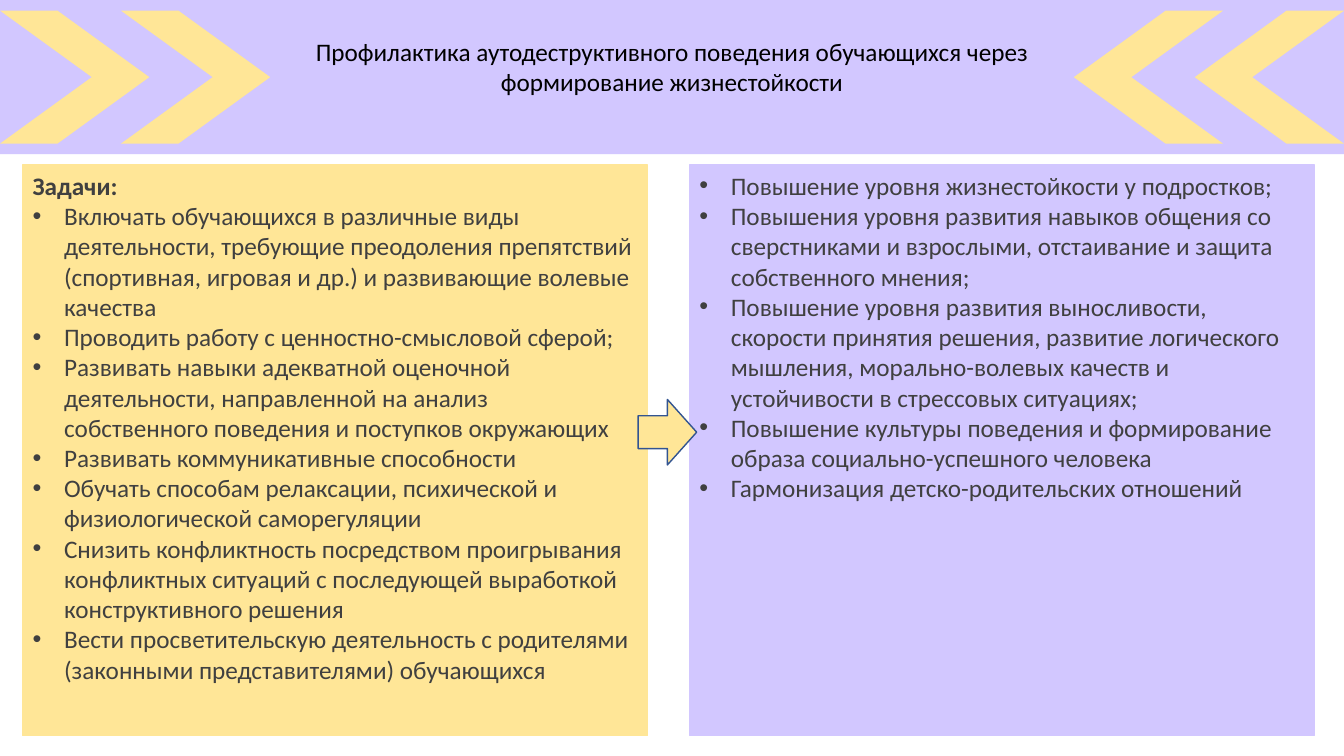
from lxml import etree
from pptx import Presentation
from pptx.dml.color import RGBColor
from pptx.enum.shapes import MSO_SHAPE as Preset
from pptx.enum.text import MSO_ANCHOR as Anchor, MSO_AUTO_SIZE as AutoSize, PP_ALIGN as Align
from pptx.oxml.ns import qn
from pptx.util import Pt

YELLOW, LILAC, VIOLET = "FFE697", "D2C7FF", "B6A4FF"
NAVY, GREY, BLACK = "325491", "404040", "000000"
SLIDE_WIDTH, SLIDE_HEIGHT = 960, 540
HEADER_BOX = (0, 0, SLIDE_WIDTH, 110.2)
TASKS_BOX = (16.2, 118, 446.4, 407.5)
RESULTS_BOX = (492.5, 118, 446.4, 407.5)

TITLE = "Профилактика аутодеструктивного поведения обучающихся через формирование жизнестойкости"
TASKS = [
    "Включать обучающихся в различные виды деятельности, требующие преодоления препятствий "
    "(спортивная, игровая и др.) и развивающие волевые качества",
    "Проводить работу с ценностно-смысловой сферой;",
    "Развивать навыки адекватной оценочной деятельности, направленной на анализ "
    "собственного поведения и поступков окружающих",
    "Развивать коммуникативные способности",
    "Обучать способам релаксации, психической и физиологической саморегуляции",
    "Снизить конфликтность посредством проигрывания конфликтных ситуаций "
    "с последующей выработкой конструктивного решения",
    "Вести просветительскую деятельность с родителями (законными представителями) обучающихся",
]
RESULTS = [
    "Повышение уровня жизнестойкости у подростков;",
    "Повышения уровня развития навыков общения со сверстниками и взрослыми, "
    "отстаивание и защита собственного мнения;",
    "Повышение уровня развития выносливости, скорости принятия решения, развитие логического "
    "мышления, морально-волевых качеств и устойчивости в стрессовых ситуациях;",
    "Повышение культуры поведения и формирование образа социально-успешного человека",
    "Гармонизация детско-родительских отношений",
]


def color(value):
    """Return the colour for a hex string."""
    return RGBColor.from_string(value)


def add_preset(slide, preset, box, fill, line=None):
    """Add a flat preset shape with an optional outline."""
    shape = slide.shapes.add_shape(preset, *map(Pt, box))
    shape.shadow.inherit = False
    shape.fill.solid()
    shape.fill.fore_color.rgb = color(fill)
    if line:
        shape.line.color.rgb = color(line)
        shape.line.width = Pt(1)
    else:
        shape.line.fill.background()
    return shape


def format_paragraph(paragraph, text, font_color, align=Align.LEFT, bold=False):
    """Fill a paragraph and set its font."""
    paragraph.text = text
    paragraph.alignment = align
    font = paragraph.font
    font.name, font.size, font.bold = "Calibri", Pt(18), bold
    font.color.rgb = color(font_color)


def add_bullet(paragraph):
    """Give a paragraph a hanging round bullet."""
    properties = paragraph._p.get_or_add_pPr()
    properties.set("marL", str(Pt(22.5)))
    properties.set("indent", str(-Pt(22.5)))
    bullet_font = etree.Element(qn("a:buFont"), typeface="Arial")
    bullet = etree.Element(qn("a:buChar"), char="•")
    properties.insert_element_before(bullet_font, "a:defRPr")
    properties.insert_element_before(bullet, "a:defRPr")


def add_header(slide, box):
    """Draw the translucent band, the title and the mirrored chevrons."""
    left, top, width, height = box
    band = add_preset(slide, Preset.RECTANGLE, box, VIOLET)
    band_color = band.element.spPr.find(qn("a:solidFill"))[0]
    etree.SubElement(band_color, qn("a:alpha"), val="61000")

    title = slide.shapes.title
    title.element.addprevious(band.element)
    title.left, title.top = Pt(left + 193), Pt(top + 22.3)
    title.width, title.height = Pt(574), Pt(51)
    frame = title.text_frame
    frame.word_wrap = True
    frame.auto_size = AutoSize.SHAPE_TO_FIT_TEXT
    frame.vertical_anchor = Anchor.TOP
    format_paragraph(frame.paragraphs[0], TITLE, BLACK, Align.CENTER)

    chevron_width, chevron_height = 106.6, 95
    chevron_top = top + (height - chevron_height) / 2
    for offset in (0, 86.4):
        mirrored = width - chevron_width - offset
        for chevron_left, rotation in ((offset, 0), (mirrored, 180)):
            chevron_box = (left + chevron_left, chevron_top, chevron_width, chevron_height)
            chevron = add_preset(slide, Preset.CHEVRON, chevron_box, YELLOW)
            chevron.adjustments[0] = 0.69
            chevron.rotation = rotation


def add_panel(slide, box, fill, items, heading=None):
    """Draw a filled panel with an optional heading and a bulleted list."""
    frame = add_preset(slide, Preset.RECTANGLE, box, fill, fill).text_frame
    frame.word_wrap = True
    frame.vertical_anchor = Anchor.TOP
    lines = [heading, *items] if heading else items
    for index, text in enumerate(lines):
        paragraph = frame.add_paragraph() if index else frame.paragraphs[0]
        is_heading = text == heading
        format_paragraph(paragraph, text, GREY, bold=is_heading)
        if not is_heading:
            add_bullet(paragraph)


def main():
    """Build and save the slide."""
    presentation = Presentation()
    presentation.slide_width, presentation.slide_height = Pt(SLIDE_WIDTH), Pt(SLIDE_HEIGHT)
    slide = presentation.slides.add_slide(presentation.slide_layouts[5])
    add_header(slide, HEADER_BOX)
    add_panel(slide, TASKS_BOX, YELLOW, TASKS, "Задачи:")
    add_panel(slide, RESULTS_BOX, LILAC, RESULTS)
    add_preset(slide, Preset.RIGHT_ARROW, (455.8, 285.3, 41.8, 46.8), YELLOW, NAVY)
    presentation.save("out.pptx")


if __name__ == "__main__":
    main()
